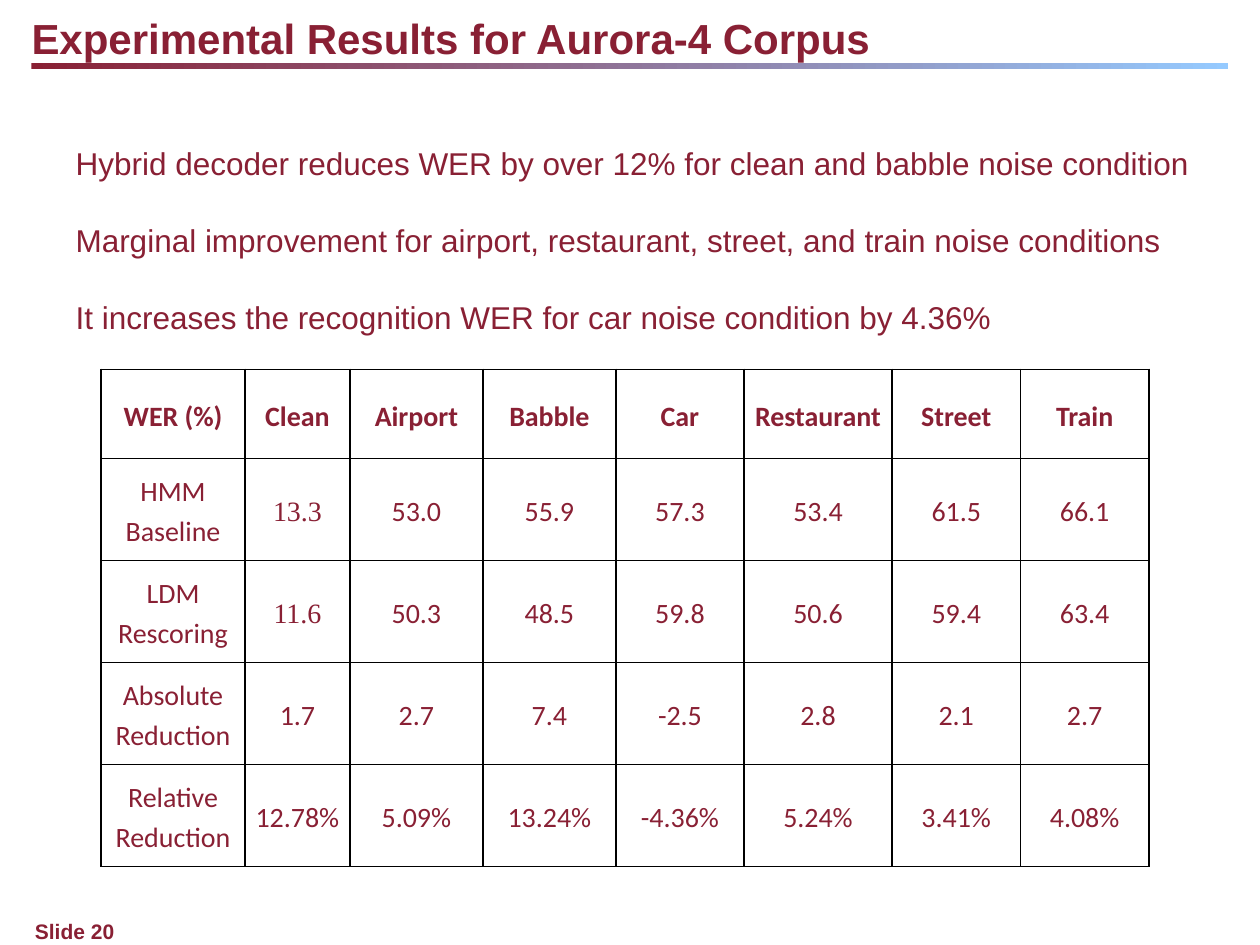
from dataclasses import dataclass

from lxml.etree import SubElement
from pptx import Presentation
from pptx.dml.color import RGBColor
from pptx.enum.shapes import MSO_SHAPE as Preset
from pptx.enum.text import MSO_ANCHOR as Anchor, MSO_AUTO_SIZE as AutoSize, PP_ALIGN as Align
from pptx.oxml.ns import qn
from pptx.util import Pt


@dataclass(frozen=True)
class Theme:
    maroon: str = "892034"
    sky: str = "95CAFF"
    border: str = "000000"
    font: str = "Arial"
    table_font: str = "Calibri"
    serif_font: str = "Times New Roman"
    title_size: float = 24
    body_size: float = 18
    table_size: float = 16
    footer_size: float = 12


class SlideBuilder:
    def __init__(self, slide, theme):
        self.slide = slide
        self.theme = theme

    def place(self, shape, left, top, width, height):
        shape.left, shape.top = Pt(left), Pt(top)
        shape.width, shape.height = Pt(width), Pt(height)

    def frame(self, shape, margin_x=0, margin_y=0):
        frame = shape.text_frame
        frame.word_wrap = True
        frame.auto_size = AutoSize.NONE
        frame.vertical_anchor = Anchor.TOP
        frame.margin_left = frame.margin_right = Pt(margin_x)
        frame.margin_top = frame.margin_bottom = Pt(margin_y)
        return frame

    def add_text(self, paragraph, text, size, font, bold=False, align=Align.LEFT):
        paragraph.alignment = align
        run = paragraph.add_run()
        run.text = text
        run.font.size = Pt(size)
        run.font.name = font
        run.font.bold = bold
        run.font.color.rgb = RGBColor.from_string(self.theme.maroon)

    def title(self, text, *box):
        shape = self.slide.shapes.title
        self.place(shape, *box)
        paragraph = self.frame(shape).paragraphs[0]
        self.add_text(paragraph, text, self.theme.title_size, self.theme.font, bold=True)

    def statements(self, lines, gap, *box):
        shape = self.slide.placeholders[1]
        self.place(shape, *box)
        frame = self.frame(shape, 7.2, 3.6)
        for index, line in enumerate(lines):
            paragraph = frame.add_paragraph() if index else frame.paragraphs[0]
            properties = paragraph._p.get_or_add_pPr()
            properties.set("marL", "0")
            properties.set("indent", "0")
            SubElement(properties, qn("a:buNone"))
            paragraph.space_before = Pt(gap if index else 0)
            self.add_text(paragraph, line, self.theme.body_size, self.theme.font)

    def gradient_bar(self, *box):
        shape = self.slide.shapes.add_shape(Preset.RECTANGLE, *map(Pt, box))
        shape.shadow.inherit = False
        shape.line.fill.background()
        shape.fill.gradient()
        shape.fill.gradient_angle = 0
        for stop, color in zip(shape.fill.gradient_stops, (self.theme.maroon, self.theme.sky)):
            stop.color.rgb = RGBColor.from_string(color)

    def footer(self, text, *box):
        shape = self.slide.shapes.add_textbox(*map(Pt, box))
        paragraph = self.frame(shape).paragraphs[0]
        self.add_text(paragraph, text, self.theme.footer_size, self.theme.font, bold=True)

    def borders(self, cell):
        properties = cell._tc.get_or_add_tcPr()
        for index, side in enumerate(("lnL", "lnR", "lnT", "lnB")):
            line = SubElement(properties, qn(f"a:{side}"), w=str(Pt(1)))
            fill = SubElement(line, qn("a:solidFill"))
            SubElement(fill, qn("a:srgbClr"), val=self.theme.border)
            properties.insert(index, line)

    def table(self, rows, widths, heights, left, top, serif_cells):
        shape = self.slide.shapes.add_table(
            len(rows), len(widths), Pt(left), Pt(top), Pt(sum(widths)), Pt(sum(heights)))
        table = shape.table
        table.first_row = table.horz_banding = False
        for column, width in zip(table.columns, widths):
            column.width = Pt(width)
        for row, height in zip(table.rows, heights):
            row.height = Pt(height)
        for row_index, values in enumerate(rows):
            for column_index, value in enumerate(values):
                cell = table.cell(row_index, column_index)
                cell.fill.background()
                self.borders(cell)
                cell.vertical_anchor = Anchor.MIDDLE
                cell.margin_left = cell.margin_right = Pt(5)
                cell.margin_top = cell.margin_bottom = Pt(0)
                serif = (row_index, column_index) in serif_cells
                font = self.theme.serif_font if serif else self.theme.table_font
                paragraph = cell.text_frame.paragraphs[0]
                paragraph.line_spacing = 1.15
                self.add_text(paragraph, value, self.theme.table_size, font,
                              bold=row_index == 0, align=Align.CENTER)


STATEMENTS = [
    "Hybrid decoder reduces WER by over 12% for clean and babble noise condition",
    "Marginal improvement for airport, restaurant, street, and train noise conditions",
    "It increases the recognition WER for car noise condition by 4.36%",
]
RESULTS = [
    ["WER (%)", "Clean", "Airport", "Babble", "Car", "Restaurant", "Street", "Train"],
    ["HMM Baseline", "13.3", "53.0", "55.9", "57.3", "53.4", "61.5", "66.1"],
    ["LDM Rescoring", "11.6", "50.3", "48.5", "59.8", "50.6", "59.4", "63.4"],
    ["Absolute Reduction", "1.7", "2.7", "7.4", "-2.5", "2.8", "2.1", "2.7"],
    ["Relative Reduction", "12.78%", "5.09%", "13.24%", "-4.36%", "5.24%", "3.41%", "4.08%"],
]
COLUMN_WIDTHS = [82.2, 60, 76, 76, 73.2, 84.6, 73.4, 73.4]
ROW_HEIGHTS = [51] + [58.3] * 4


def main():
    presentation = Presentation()
    presentation.slide_width, presentation.slide_height = Pt(720), Pt(540)
    slide = presentation.slides.add_slide(presentation.slide_layouts[1])
    builder = SlideBuilder(slide, Theme())
    builder.gradient_bar(18, 36, 684, 3.6)
    builder.footer("Slide 20", 20, 525, 642, 14.4)
    builder.title("Experimental Results for Aurora-4 Corpus", 18, 7, 678, 28.8)
    builder.statements(STATEMENTS, 22.5, 36, 78.5, 654.5, 116.5)
    builder.table(RESULTS, COLUMN_WIDTHS, ROW_HEIGHTS, 57.8, 211, {(1, 1), (2, 1)})
    presentation.save("out.pptx")


if __name__ == "__main__":
    main()
